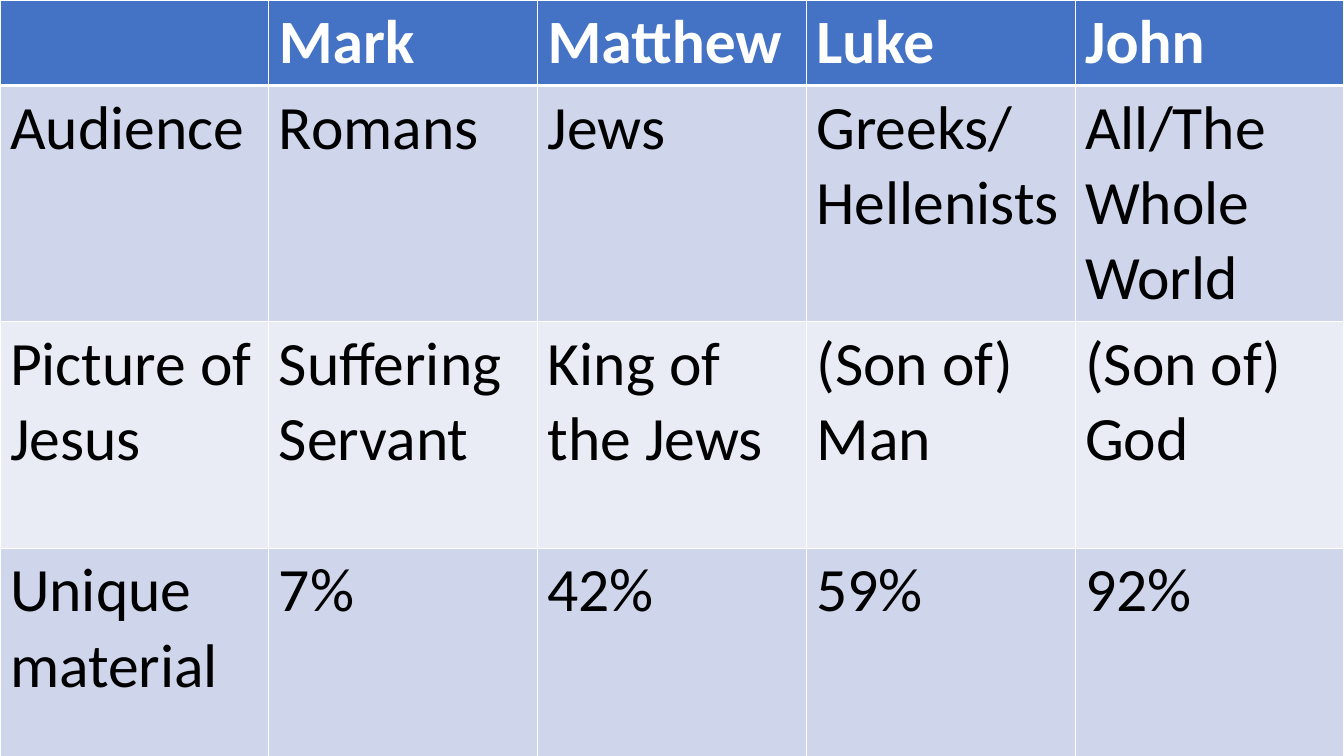
from lxml import etree
from pptx import Presentation
from pptx.dml.color import RGBColor
from pptx.oxml.ns import qn
from pptx.util import Inches, Pt

COLORS = {"head": "4472C4", "odd": "CFD5EA", "even": "E9EBF5",
          "white": "FFFFFF", "black": "000000"}
FONT, SIZE = "Calibri", 44
WIDE, HIGH = 13.33, 7.5
THIN, THICK = 1, 3
BLANK = 6

GOSPELS = [
    ["", "Mark", "Matthew", "Luke", "John"],
    ["Audience", "Romans", "Jews", "Greeks/\nHellenists", "All/The Whole World"],
    ["Picture of Jesus", "Suffering Servant", "King of the Jews",
     "(Son of) Man", "(Son of) God"],
    ["Unique material", "7%", "42%", "59%", "92%"],
]
# Row heights as shares of the slide's height
SHARES = [0.11, 0.31, 0.3, 0.3]


class Deck:
    def __init__(self):
        self.show = Presentation()
        self.show.slide_width = Inches(WIDE)
        self.show.slide_height = Inches(HIGH)
        self.slide = self.show.slides.add_slide(self.show.slide_layouts[BLANK])

    def border(self, cell, side, width):
        props = cell._tc.get_or_add_tcPr()
        line = etree.SubElement(props, qn(f"a:ln{side}"), w=str(Pt(width)))
        fill = etree.SubElement(line, qn("a:solidFill"))
        etree.SubElement(fill, qn("a:srgbClr"), val=COLORS["white"])

    def label(self, cell, text, color, bold):
        frame = cell.text_frame
        for num, part in enumerate(text.split("\n")):
            para = frame.add_paragraph() if num else frame.paragraphs[0]
            if not part:
                para.font.size = Pt(SIZE)
                continue
            run = para.add_run()
            run.text = part
            run.font.name = FONT
            run.font.size = Pt(SIZE)
            run.font.bold = bold
            run.font.color.rgb = RGBColor.from_string(COLORS[color])

    def cell(self, cell, text, row):
        head = row == 0
        widths = {"L": THIN, "R": THIN,
                  "T": THICK if row == 1 else THIN,
                  "B": THICK if head else THIN}
        for side, width in widths.items():
            self.border(cell, side, width)
        tone = "head" if head else "odd" if row % 2 else "even"
        cell.fill.solid()
        cell.fill.fore_color.rgb = RGBColor.from_string(COLORS[tone])
        self.label(cell, text, "white" if head else "black", head)

    def table(self, rows, shares):
        """Add a table across the full slide width."""
        count = len(rows[0])
        frame = self.slide.shapes.add_table(
            len(rows), count, 0, 0, Inches(WIDE), Inches(HIGH * sum(shares)))
        grid = frame.table
        for col in grid.columns:
            col.width = Inches(WIDE / count)
        for row, (texts, share) in enumerate(zip(rows, shares)):
            grid.rows[row].height = Inches(HIGH * share)
            for col, text in enumerate(texts):
                self.cell(grid.cell(row, col), text, row)


def main():
    deck = Deck()
    deck.table(GOSPELS, SHARES)
    deck.show.save("out.pptx")


if __name__ == "__main__":
    main()
